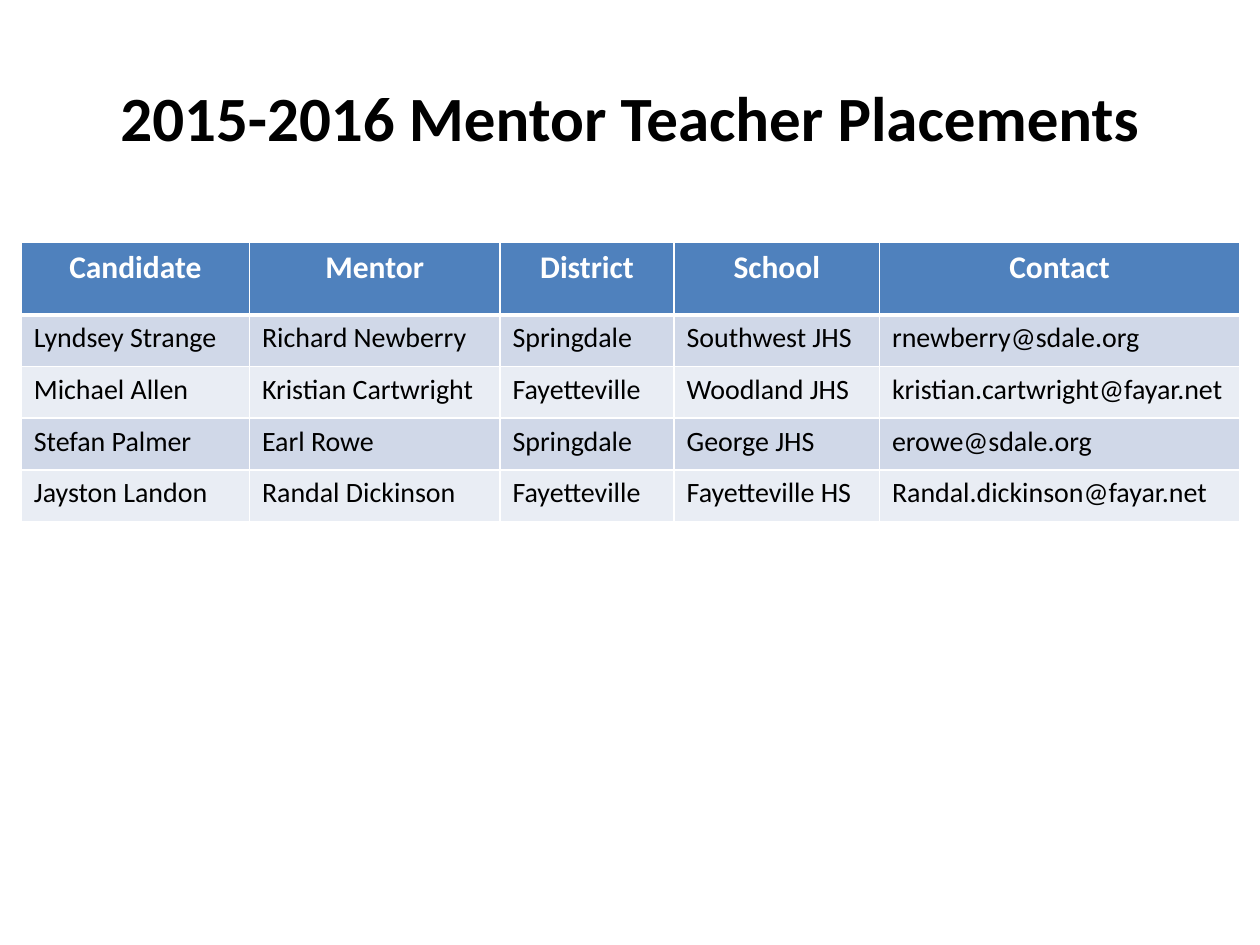
from dataclasses import dataclass

from lxml import etree
from pptx import Presentation, util as u
from pptx.dml import color
from pptx.enum import text
from pptx.oxml import ns

FONT = "Calibri"
BLACK = "000000"
WHITE = "FFFFFF"
HEADER_FILL = "4F81BD"
BAND_FILLS = ("D0D8E8", "E9EDF4")
HEADER_HEIGHT = u.Cm(1.47)
ROW_HEIGHT = u.Cm(1.04)
THIN, THICK = 1, 3


@dataclass(frozen=True)
class Column:
    heading: str
    width: float


@dataclass(frozen=True)
class Placement:
    candidate: str
    mentor: str
    district: str
    school: str
    contact: str

    def values(self) -> list[str]:
        return [self.candidate, self.mentor, self.district, self.school, self.contact]


@dataclass(frozen=True)
class CellStyle:
    fill: str
    font_color: str
    size: int
    bold: bool
    alignment: text.PP_ALIGN
    top: int = THIN
    bottom: int = THIN


COLUMNS = [
    Column("Candidate", 4.6),
    Column("Mentor", 5.05),
    Column("District", 3.51),
    Column("School", 4.14),
    Column("Contact", 7.26),
]

PLACEMENTS = [
    Placement("Lyndsey Strange", "Richard Newberry", "Springdale",
              "Southwest JHS", "rnewberry@sdale.org"),
    Placement("Michael Allen", "Kristian Cartwright", "Fayetteville",
              "Woodland JHS", "kristian.cartwright@fayar.net"),
    Placement("Stefan Palmer", "Earl Rowe", "Springdale",
              "George JHS", "erowe@sdale.org"),
    Placement("Jayston Landon", "Randal Dickinson", "Fayetteville",
              "Fayetteville HS", "Randal.dickinson@fayar.net"),
]


def rgb(hex_color: str) -> color.RGBColor:
    return color.RGBColor.from_string(hex_color)


def format_text(frame, size: int, bold: bool, font_color: str,
                alignment: text.PP_ALIGN) -> None:
    for paragraph in frame.paragraphs:
        paragraph.alignment = alignment
        for run in paragraph.runs:
            run.font.name = FONT
            run.font.size = u.Pt(size)
            run.font.bold = bold
            run.font.color.rgb = rgb(font_color)


def add_border(cell, side: str, points: int) -> None:
    properties = cell._tc.get_or_add_tcPr()
    line = etree.SubElement(properties, ns.qn(f"a:ln{side}"), w=str(u.Pt(points)))
    fill = etree.SubElement(line, ns.qn("a:solidFill"))
    etree.SubElement(fill, ns.qn("a:srgbClr"), val=WHITE)


def draw_row(row, values: list[str], style: CellStyle) -> None:
    borders = {"L": THIN, "R": THIN, "T": style.top, "B": style.bottom}
    for cell, value in zip(row.cells, values):
        cell.text_frame.text = value
        format_text(cell.text_frame, style.size, style.bold,
                    style.font_color, style.alignment)
        for side, points in borders.items():
            add_border(cell, side, points)
        cell.fill.solid()
        cell.fill.fore_color.rgb = rgb(style.fill)


def draw_title(slide, title: str) -> None:
    shape = slide.shapes.add_textbox(u.Cm(1.27), u.Cm(0.76), u.Cm(22.86), u.Cm(3.18))
    frame = shape.text_frame
    frame.word_wrap = True
    frame.vertical_anchor = text.MSO_ANCHOR.MIDDLE
    frame.text = title
    format_text(frame, 36, True, BLACK, text.PP_ALIGN.CENTER)


def draw_placements(slide) -> None:
    width = u.Cm(sum(column.width for column in COLUMNS))
    height = HEADER_HEIGHT + ROW_HEIGHT * len(PLACEMENTS)
    table = slide.shapes.add_table(len(PLACEMENTS) + 1, len(COLUMNS),
                                   u.Cm(0.43), u.Cm(4.88), width, height).table
    for table_column, column in zip(table.columns, COLUMNS):
        table_column.width = u.Cm(column.width)

    header, *body = table.rows
    header.height = HEADER_HEIGHT
    draw_row(header, [column.heading for column in COLUMNS],
             CellStyle(HEADER_FILL, WHITE, 18, True, text.PP_ALIGN.CENTER, bottom=THICK))
    for index, (row, placement) in enumerate(zip(body, PLACEMENTS)):
        row.height = ROW_HEIGHT
        draw_row(row, placement.values(),
                 CellStyle(BAND_FILLS[index % 2], BLACK, 16, False, text.PP_ALIGN.LEFT,
                           top=THIN if index else THICK))


def main() -> None:
    presentation = Presentation()
    presentation.slide_width = u.Cm(25.4)
    presentation.slide_height = u.Cm(19.05)
    slide = presentation.slides.add_slide(presentation.slide_layouts[6])
    draw_title(slide, "2015-2016 Mentor Teacher Placements")
    draw_placements(slide)
    presentation.save("out.pptx")


if __name__ == "__main__":
    main()
